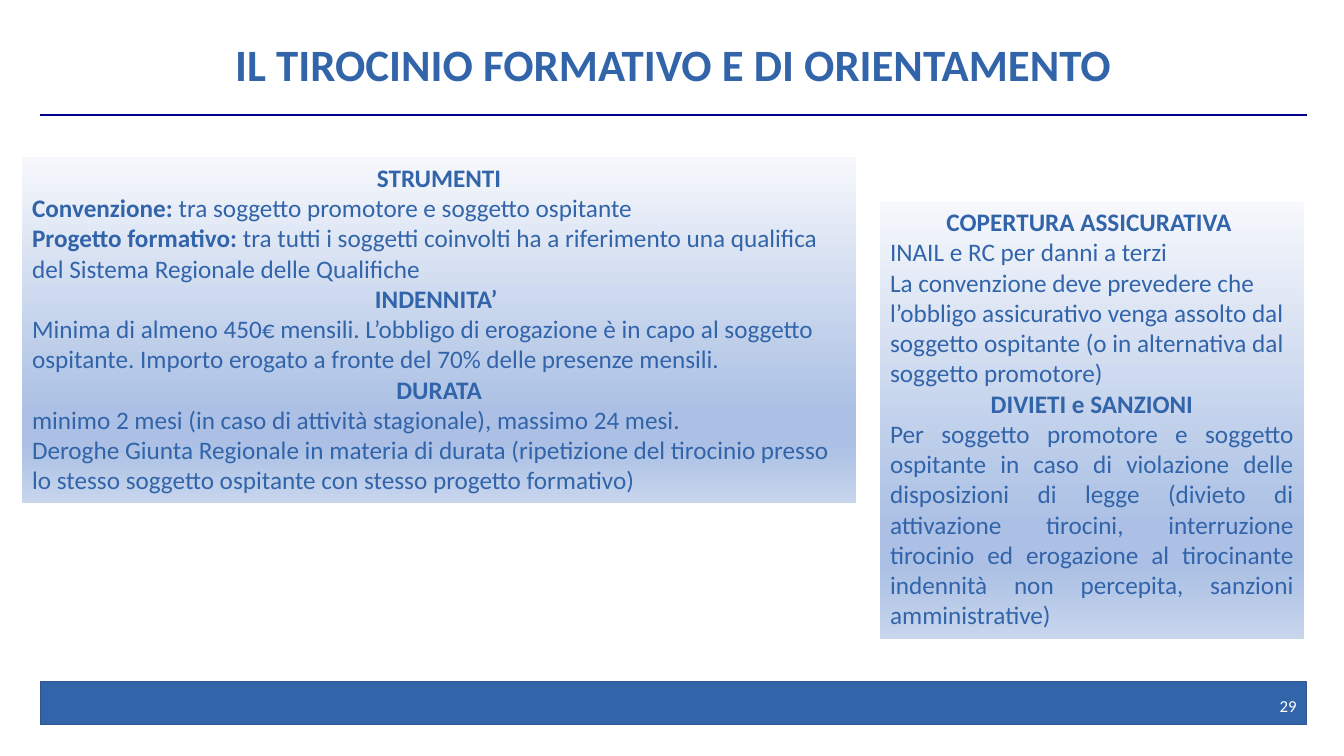
from lxml import etree
from pptx import Presentation
from pptx import util as u
from pptx.dml.color import RGBColor
from pptx.enum import shapes, text
from pptx.oxml.ns import qn

BLUE = RGBColor(0x32, 0x64, 0xAA)
BAR_EDGE = RGBColor(0x32, 0x54, 0x91)
NAVY = RGBColor(0x02, 0x00, 0x8B)
WHITE = RGBColor(0xFF, 0xFF, 0xFF)
PALE = RGBColor(0xF6, 0xF8, 0xFC)
MID = RGBColor(0xAB, 0xC0, 0xE4)
LIGHT = RGBColor(0xC7, 0xD5, 0xED)
PANEL_STOPS = [(0, PALE), (74, MID), (83, MID), (100, LIGHT)]

LEFT, CENTER = text.PP_ALIGN.LEFT, text.PP_ALIGN.CENTER
RIGHT, JUSTIFY = text.PP_ALIGN.RIGHT, text.PP_ALIGN.JUSTIFY
MIDDLE = text.MSO_ANCHOR.MIDDLE

# Each paragraph: alignment, bold lead, regular text
TOOLS = [
    (CENTER, "STRUMENTI", ""),
    (LEFT, "Convenzione: ", "tra soggetto promotore e soggetto ospitante"),
    (LEFT, "Progetto formativo: ", "tra tutti i soggetti coinvolti ha a riferimento "
     "una qualifica del Sistema Regionale delle Qualifiche"),
    (CENTER, "INDENNITA’ ", ""),
    (LEFT, "", "Minima di almeno 450€ mensili. L’obbligo di erogazione è in capo al "
     "soggetto ospitante. Importo erogato a fronte del 70% delle presenze mensili."),
    (CENTER, "DURATA", ""),
    (LEFT, "", "minimo 2 mesi (in caso di attività stagionale), massimo 24 mesi."),
    (LEFT, "", "Deroghe Giunta Regionale in materia di durata (ripetizione del tirocinio "
     "presso lo stesso soggetto ospitante con stesso progetto formativo)"),
]
COVERAGE = [
    (CENTER, "COPERTURA ASSICURATIVA ", ""),
    (LEFT, "", "INAIL e RC per danni a terzi"),
    (LEFT, "", "La convenzione deve prevedere che l’obbligo assicurativo venga assolto "
     "dal soggetto ospitante (o in alternativa dal soggetto promotore)"),
    (CENTER, "DIVIETI e SANZIONI", ""),
    (JUSTIFY, "", "Per soggetto promotore e soggetto ospitante in caso di violazione delle "
     "disposizioni di legge (divieto di attivazione tirocini, interruzione tirocinio ed "
     "erogazione al tirocinante indennità non percepita, sanzioni amministrative)"),
]


def apply_format(target, values):
    for attribute, value in values.items():
        setattr(target, attribute, value)


def write_run(paragraph, words, size, color, bold=False):
    run = paragraph.add_run()
    run.text = words
    apply_format(run.font, {"name": "Calibri", "size": u.Pt(size), "bold": bold})
    run.font.color.rgb = color


def add_header(slide, left, top, width, height):
    # Title
    title = slide.shapes.title
    apply_format(title, {"left": u.Inches(left), "top": u.Inches(top),
                         "width": u.Inches(width), "height": u.Inches(height)})
    apply_format(title.text_frame, {"vertical_anchor": MIDDLE, "word_wrap": True})
    heading = title.text_frame.paragraphs[0]
    apply_format(heading, {"alignment": CENTER, "line_spacing": 0.9})
    write_run(heading, "IL TIROCINIO FORMATIVO E DI ORIENTAMENTO", 32, BLUE, True)

    # Rule below the title
    rule_y = u.Inches(top + height + 0.15)
    rule = slide.shapes.add_connector(shapes.MSO_CONNECTOR.STRAIGHT, u.Inches(left), rule_y,
                                      u.Inches(left + width), rule_y)
    rule.line.color.rgb = NAVY
    rule.line.width = u.Pt(1)
    etree.SubElement(rule._element.spPr, qn("a:effectLst"))


def add_panel(slide, paragraphs, left, top, width, height):
    panel = slide.shapes.add_shape(shapes.MSO_SHAPE.RECTANGLE, u.Inches(left), u.Inches(top),
                                   u.Inches(width), u.Inches(height))
    panel.shadow.inherit = False
    panel.line.fill.background()

    # Top-to-bottom gradient
    panel.fill.gradient()
    panel.fill.gradient_angle = 270
    stops = panel._element.spPr.find(".//" + qn("a:gsLst"))
    stops.clear()
    for percent, color in PANEL_STOPS:
        stop = etree.SubElement(stops, qn("a:gs"), pos=str(percent * 1000))
        etree.SubElement(stop, qn("a:srgbClr"), val=str(color))

    # Headings and body text
    frame = panel.text_frame
    apply_format(frame, {"word_wrap": True, "vertical_anchor": text.MSO_ANCHOR.TOP,
                         "auto_size": text.MSO_AUTO_SIZE.SHAPE_TO_FIT_TEXT})
    for index, (alignment, lead, body) in enumerate(paragraphs):
        paragraph = frame.add_paragraph() if index else frame.paragraphs[0]
        paragraph.alignment = alignment
        for words, bold in ((lead, True), (body, False)):
            if words:
                write_run(paragraph, words, 18, BLUE, bold)


def add_footer(slide, left, top, width, height):
    # Bar
    bar = slide.shapes.add_shape(shapes.MSO_SHAPE.RECTANGLE, u.Inches(left), u.Inches(top),
                                 u.Inches(width), u.Inches(height))
    bar.shadow.inherit = False
    bar.fill.solid()
    bar.fill.fore_color.rgb = BLUE
    bar.line.color.rgb = BAR_EDGE
    bar.line.width = u.Pt(1)

    # Page number at the right end
    number_width = 1.2
    page_number = slide.shapes.add_textbox(u.Inches(left + width - number_width),
                                           u.Inches(top + 0.04),
                                           u.Inches(number_width), u.Inches(0.4))
    apply_format(page_number.text_frame, {"word_wrap": True, "vertical_anchor": MIDDLE})
    paragraph = page_number.text_frame.paragraphs[0]
    paragraph.alignment = RIGHT
    write_run(paragraph, "29", 12, WHITE)


def main():
    deck = Presentation()
    apply_format(deck, {"slide_width": u.Inches(13.33), "slide_height": u.Inches(7.5)})
    slide = deck.slides.add_slide(deck.slide_layouts.get_by_name("Title Only"))
    add_footer(slide, 0.4, 6.76, 12.56, 0.43)
    add_header(slide, 0.4, 0.34, 12.56, 0.65)
    add_panel(slide, TOOLS, 0.22, 1.56, 8.27, 3.43)
    add_panel(slide, COVERAGE, 8.73, 2, 4.2, 4.34)
    deck.save("out.pptx")


if __name__ == "__main__":
    main()
